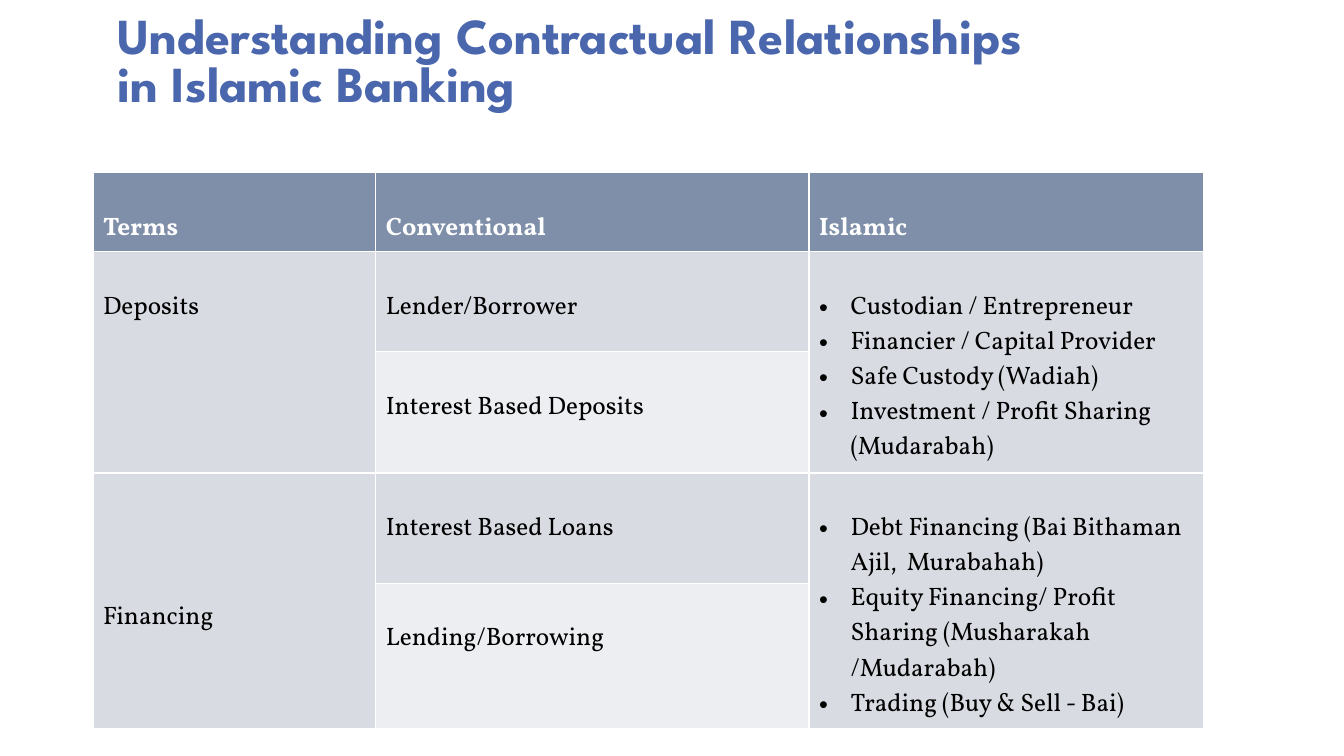
from lxml import etree
from pptx import Presentation
from pptx.dml.color import RGBColor
from pptx.enum import text as t
from pptx.oxml.ns import qn
from pptx.util import Pt

BLUE = RGBColor(0x4A, 0x66, 0xAC)
SLATE = RGBColor(0x7F, 0x8F, 0xA9)
MIST = RGBColor(0xD8, 0xDB, 0xE2)
PALE = RGBColor(0xEC, 0xEE, 0xF1)
WHITE = RGBColor(0xFF, 0xFF, 0xFF)
BLACK = RGBColor(0, 0, 0)

COLS = [202, 309.5, 282]
ROWS = [56.5, 71.3, 86.7, 78.7, 104]
INDENT = Pt(22.5)

# (row, column): lines of text
CELLS = {
    (0, 0): ["Terms"],
    (0, 1): ["Conventional"],
    (0, 2): ["Islamic"],
    (1, 0): ["Deposits"],
    (1, 1): ["Lender/Borrower"],
    (1, 2): [
        "Custodian / Entrepreneur",
        "Financier / Capital Provider",
        "Safe Custody (Wadiah)",
        "Investment / Profit Sharing (Mudarabah)",
    ],
    (2, 1): ["Interest Based Deposits"],
    (3, 0): ["Financing"],
    (3, 1): ["Interest Based Loans"],
    (3, 2): [
        "Debt Financing (Bai Bithaman Ajil,  Murabahah)",
        "Equity Financing/ Profit Sharing (Musharakah /Mudarabah)",
        "Trading (Buy & Sell - Bai)",
    ],
    (4, 1): ["Lending/Borrowing"],
}


def add_bullet(para):
    props = para._p.get_or_add_pPr()
    props.set("marL", str(INDENT))
    props.set("indent", str(-INDENT))
    etree.SubElement(props, qn("a:buFont")).set("typeface", "Arial")
    etree.SubElement(props, qn("a:buChar")).set("char", "•")


def set_font(para, name, size, color, bold):
    font = para.font
    font.name, font.size, font.bold = name, Pt(size), bold
    font.color.rgb = color


prs = Presentation()
prs.slide_width, prs.slide_height = Pt(960), Pt(540)
slide = prs.slides.add_slide(prs.slide_layouts[5])

# Title
title = slide.shapes.title
title.left, title.top, title.width, title.height = Pt(77), Pt(0), Pt(684), Pt(84)
frame = title.text_frame
frame.text = "Understanding Contractual Relationships in Islamic Banking"
frame.word_wrap = True
frame.auto_size = t.MSO_AUTO_SIZE.NONE
frame.vertical_anchor = t.MSO_ANCHOR.BOTTOM
head = frame.paragraphs[0]
head.alignment = t.PP_ALIGN.LEFT
head.line_spacing = 0.8
set_font(head, "League Spartan", 36, BLUE, True)

# Table
table = slide.shapes.add_table(
    len(ROWS), len(COLS), Pt(66.4), Pt(123.4), Pt(sum(COLS)), Pt(sum(ROWS))
).table
for col, width in zip(table.columns, COLS):
    col.width = Pt(width)
for row, height in zip(table.rows, ROWS):
    row.height = Pt(height)
for top in (1, 3):
    for col in (0, 2):
        table.cell(top, col).merge(table.cell(top + 1, col))

for (row, col), lines in CELLS.items():
    cell = table.cell(row, col)
    cell.fill.solid()
    cell.fill.fore_color.rgb = SLATE if row == 0 else MIST if row % 2 else PALE
    cell.margin_top = Pt(27.6)
    cell.text = "\n".join(lines)
    for para in cell.text_frame.paragraphs:
        if row and col == 2:
            add_bullet(para)
        set_font(para, "Vollkorn", 18, BLACK if row else WHITE, row == 0)
table.cell(3, 0).vertical_anchor = t.MSO_ANCHOR.MIDDLE

prs.save("out.pptx")
